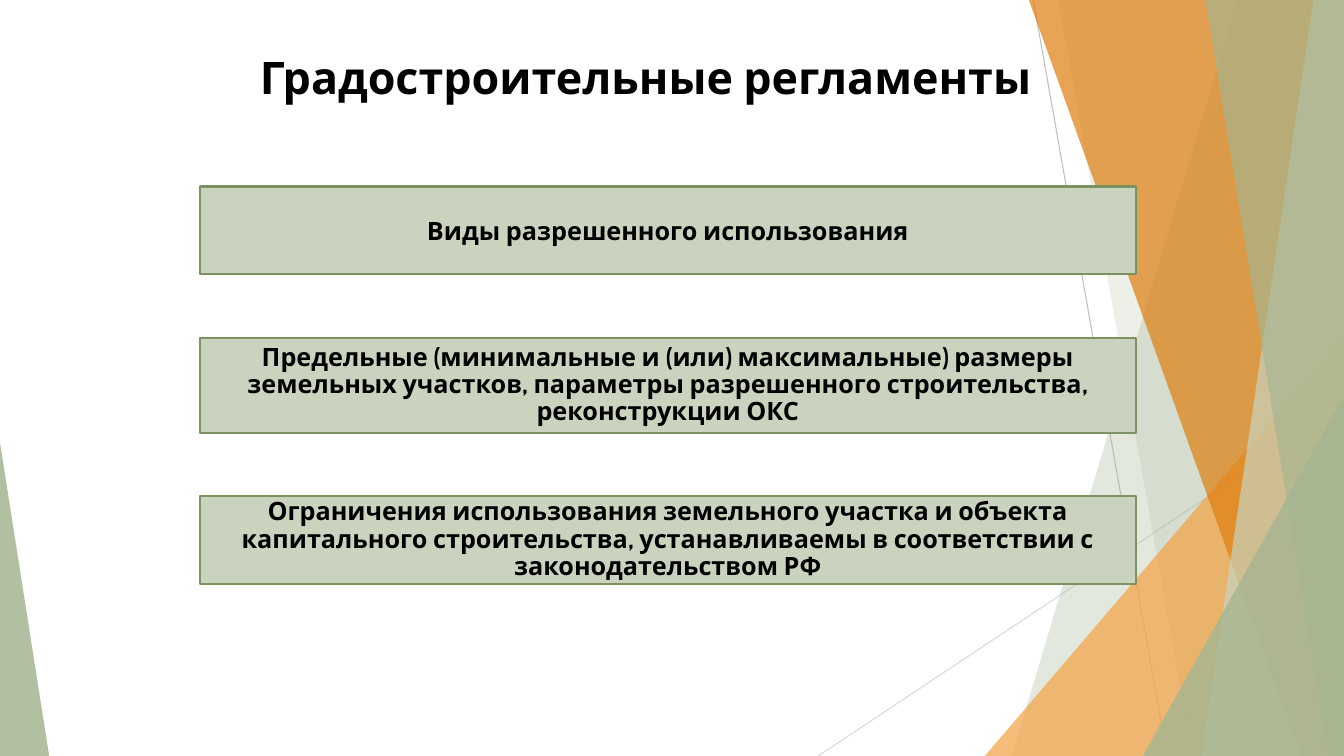
from lxml import etree
from pptx import Presentation
from pptx import util as u
from pptx.dml.color import RGBColor
from pptx.enum import shapes, text
from pptx.oxml.ns import qn

COLORS = {
    "ink": "000000", "sage": "A5B592", "pale": "C9D3BE", "edge": "7D9263",
    "amber": "F3A447", "orange": "DD7E0E", "grey": "BFBFBF", "mist": "D9D9D9",
}
WIDTH, HEIGHT = 33.87, 19.05


class RegulationSlide:
    """Draws the styled elements of the current slide."""

    def __init__(self, page):
        self.page = page
        self.font = {"name": "Cabin", "bold": True}

    def color(self, name):
        return RGBColor.from_string(COLORS[name])

    def apply(self, target, values):
        for name, value in values.items():
            setattr(target, name, value)

    def fill(self, shape, color, opacity=100):
        shape.shadow.inherit = False
        shape.fill.solid()
        shape.fill.fore_color.rgb = self.color(color)
        if opacity < 100:
            tint = shape._element.spPr.find(qn("a:solidFill"))[0]
            etree.SubElement(tint, qn("a:alpha"), val=str(opacity * 1000))

    def line(self, start, end, color):
        points = [u.Cm(value) for value in (*start, *end)]
        line = self.page.shapes.add_connector(shapes.MSO_CONNECTOR.STRAIGHT, *points)
        line.line.width = u.Pt(0.75)
        line.line.color.rgb = self.color(color)
        etree.SubElement(line._element.spPr, qn("a:effectLst"))

    def band(self, top_x, bottom_x, color, opacity):
        corners = [(WIDTH, 0), (WIDTH, HEIGHT), (bottom_x, HEIGHT)]
        outline = self.page.shapes.build_freeform(u.Cm(top_x), 0)
        outline.add_line_segments([(u.Cm(x), u.Cm(y)) for x, y in corners])
        band = outline.convert_to_shape()
        self.fill(band, color, opacity)
        band.line.fill.background()

    def shape(self, kind, left, top, width, height):
        return self.page.shapes.add_shape(kind, *map(u.Cm, (left, top, width, height)))

    def triangle(self, left, width, height, apex, color, opacity):
        kind = shapes.MSO_SHAPE.ISOSCELES_TRIANGLE
        triangle = self.shape(kind, left, HEIGHT - height, width, height)
        triangle.adjustments[0] = apex
        self.fill(triangle, color, opacity)
        triangle.line.fill.background()

    def label(self, frame, words, size, **layout):
        para = frame.paragraphs[0]
        self.apply(para, layout)
        span = para.add_run()
        span.text = words
        self.apply(span.font, {**self.font, "size": u.Pt(size)})
        span.font.color.rgb = self.color("ink")

    def title(self, words):
        box = self.page.shapes.add_textbox(*map(u.Cm, (6.3, 1.14, 21.59, 2.39)))
        box.text_frame.word_wrap = True
        self.label(box.text_frame, words, 32)

    def box(self, top, height, words, **layout):
        box = self.shape(shapes.MSO_SHAPE.RECTANGLE, 5.03, top, 23.6, height)
        self.fill(box, "pale")
        box.line.color.rgb = self.color("edge")
        box.line.width = u.Pt(1.5)
        margins = dict.fromkeys(
            ("margin_left", "margin_top", "margin_right", "margin_bottom"), u.Cm(0.03))
        self.apply(box.text_frame, {
            **margins, "word_wrap": True, "vertical_anchor": text.MSO_ANCHOR.MIDDLE})
        self.label(box.text_frame, words, 18, alignment=text.PP_ALIGN.CENTER, **layout)


def main():
    deck = Presentation()
    deck.slide_width, deck.slide_height = u.Cm(WIDTH), u.Cm(HEIGHT)
    slide = RegulationSlide(deck.slides.add_slide(deck.slide_layouts[6]))

    slide.line((26.04, 0), (29.41, HEIGHT), "grey")
    slide.line((WIDTH, 10.24), (20.62, HEIGHT), "mist")
    slide.band(31.19, 25.5, "sage", 30)
    slide.band(26.67, 30.05, "sage", 20)
    slide.triangle(24.82, 9.05, 10.59, 1, "amber", 72)
    slide.band(25.93, 32.79, "orange", 70)
    slide.band(33.1, 30.28, "pale", 70)
    slide.band(30.38, 33.48, "sage", 65)
    slide.triangle(28.8, 5.07, 9.07, 1, "sage", 80)
    slide.triangle(0, 1.24, 7.9, 0, "sage", 85)

    slide.title("Градостроительные регламенты")
    dense = {"line_spacing": 0.9}
    slide.box(4.7, 2.21, "Виды разрешенного использования")
    slide.box(8.51, 2.41, "Предельные (минимальные и (или) максимальные) размеры "
              "земельных участков, параметры разрешенного строительства, "
              "реконструкции ОКС", **dense)
    slide.box(12.5, 2.21, "Ограничения использования земельного участка и объекта "
              "капитального строительства, устанавливаемы в соответствии с "
              "законодательством РФ", **dense)
    deck.save("out.pptx")


if __name__ == "__main__":
    main()
